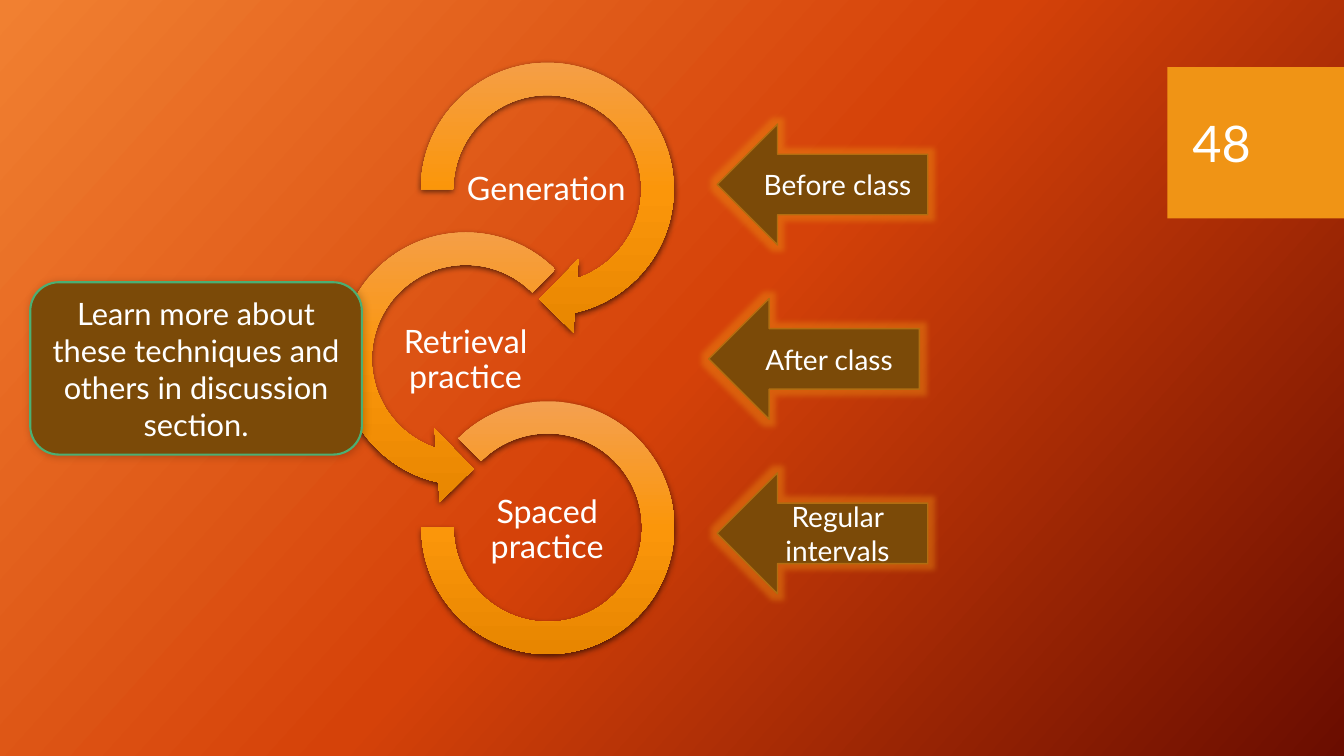
from copy import deepcopy

from lxml import etree
from pptx import Presentation
from pptx.dml.color import RGBColor
from pptx.enum.shapes import MSO_SHAPE
from pptx.enum.text import MSO_ANCHOR, PP_ALIGN
from pptx.oxml.ns import qn
from pptx.util import Pt

RECT, ROUNDED, LEFT_ARROW = MSO_SHAPE.RECTANGLE, MSO_SHAPE.ROUNDED_RECTANGLE, MSO_SHAPE.LEFT_ARROW
CLOCKWISE, COUNTER, ARC = MSO_SHAPE.CIRCULAR_ARROW, MSO_SHAPE.LEFT_CIRCULAR_ARROW, MSO_SHAPE.BLOCK_ARC
MIDDLE = MSO_ANCHOR.MIDDLE
CENTER, LEFT = PP_ALIGN.CENTER, PP_ALIGN.LEFT

COLORS = {
    "white": "FFFFFF", "tile": "F09415", "brown": "7B4A08",
    "arrow_line": "B26D10", "note_line": "4BAF73", "black": "000000",
}
BACKGROUND = ("F18031", "D54209", "6A0D00")
RING = ("F4A050", "FB960A", "E88600")

TECHNIQUES = [
    ("Generation", CLOCKWISE, (58.3, 0, 210), (0.11, 11.423, 45, 108, 0.125), 104.3),
    ("Retrieval practice", COUNTER, (0, 121.2, 210), (0.11, 11.423, 63, 189, 0.125), 46.6),
    ("Spaced practice", ARC, (73.3, 256.4, 180.6), (135, 108, 0.127), 104.9),
]
TIMINGS = [("Before class", 6), ("After class", 0), ("Regular intervals", 6)]


def rgb(name):
    return RGBColor.from_string(COLORS[name])


def paint_gradient(fill, element, stops, angle):
    fill.gradient()
    fill.gradient_angle = 360 - angle
    stop_list = element.xpath(".//a:gsLst")[0]
    stop_list.insert(1, deepcopy(stop_list[0]))
    for stop, color, position in zip(fill.gradient_stops, stops, (0, 0.5, 1)):
        stop.color.rgb = RGBColor.from_string(color)
        stop.position = position


def add_effect(shape, kind, color, alpha, **settings):
    effects = shape._element.spPr.find(qn("a:effectLst"))
    effect = etree.SubElement(effects, qn(f"a:{kind}"))
    for key, value in settings.items():
        effect.set(key, str(int(value)))
    tint = etree.SubElement(effect, qn("a:srgbClr"), val=COLORS[color])
    etree.SubElement(tint, qn("a:alpha"), val=str(alpha * 1000))


def add_block(slide, kind, box, fill=None, line=None, weight=1):
    block = slide.shapes.add_shape(kind, *map(Pt, box))
    block.shadow.inherit = False
    if fill:
        block.fill.solid()
        block.fill.fore_color.rgb = rgb(fill)
    if line:
        block.line.color.rgb = rgb(line)
        block.line.width = Pt(weight)
    else:
        block.line.fill.background()
    return block


def write(shape, text, size, align=CENTER, spacing=None, inset=None):
    frame = shape.text_frame
    settings = {"word_wrap": True, "vertical_anchor": MIDDLE}
    if inset is not None:
        sides = ("left", "top", "right", "bottom")
        settings.update({f"margin_{side}": Pt(inset) for side in sides})
    for key, value in settings.items():
        setattr(frame, key, value)
    paragraph = frame.paragraphs[0]
    paragraph.text = text
    paragraph.alignment = align
    paragraph.line_spacing = spacing
    font = paragraph.runs[0].font
    for key, value in {"name": "Lato", "size": Pt(size)}.items():
        setattr(font, key, value)
    font.color.rgb = rgb("white")


def add_page_number(slide, left, top, width, height):
    add_block(slide, RECT, (left, top, width, height), "tile")
    number = slide.shapes.add_textbox(Pt(left + 10.8), Pt(top + 10.8), Pt(90.7), Pt(85.7))
    write(number, "48", 36, LEFT)


def add_technique_rings(slide, left, top):
    step = 121.6
    for row, (name, kind, (dx, dy, size), adjustments, label_dx) in enumerate(TECHNIQUES):
        ring = add_block(slide, kind, (left + dx, top + dy, size, size))
        for index, value in enumerate(adjustments):
            ring.adjustments[index] = value
        paint_gradient(ring.fill, ring._element, RING, 90)
        add_effect(ring, "outerShdw", "black", 63,
                   blurRad=Pt(4.5), dist=Pt(1.5), dir=90 * 60000, rotWithShape=0)
        label = slide.shapes.add_textbox(
            Pt(left + label_dx), Pt(top + 76.4 + row * step), Pt(116.6), Pt(58.3))
        write(label, name, 23, spacing=0.9, inset=1.4)


def add_timing_arrows(slide, left, top, width, height):
    step = 124.6
    for row, (timing, shift) in enumerate(TIMINGS):
        box = (left + shift, top + row * step, width, height)
        arrow = add_block(slide, LEFT_ARROW, box, "brown", "arrow_line")
        add_effect(arrow, "glow", "tile", 40, rad=Pt(8))
        write(arrow, timing, 20)


def add_note(slide, left, top, width, height):
    note = add_block(slide, ROUNDED, (left, top, width, height), "brown", "note_line", 1.5)
    add_effect(note, "outerShdw", "black", 20,
               blurRad=Pt(6), dist=Pt(1), dir=45 * 60000, rotWithShape=0)
    write(note, "Learn more about these techniques and others in discussion section.", 22)


def main():
    deck = Presentation()
    deck.slide_width, deck.slide_height = Pt(960), Pt(540)
    slide = deck.slides.add_slide(deck.slide_layouts[6])
    paint_gradient(slide.background.fill, slide._element, BACKGROUND, 42)
    add_page_number(slide, 833.8, 48, 126.2, 108)
    add_technique_rings(slide, 227.7, 30.2)
    add_timing_arrows(slide, 506.2, 88.6, 150.5, 86.4)
    add_note(slide, 21.6, 201.6, 236.9, 123.1)
    deck.save("out.pptx")


if __name__ == "__main__":
    main()
